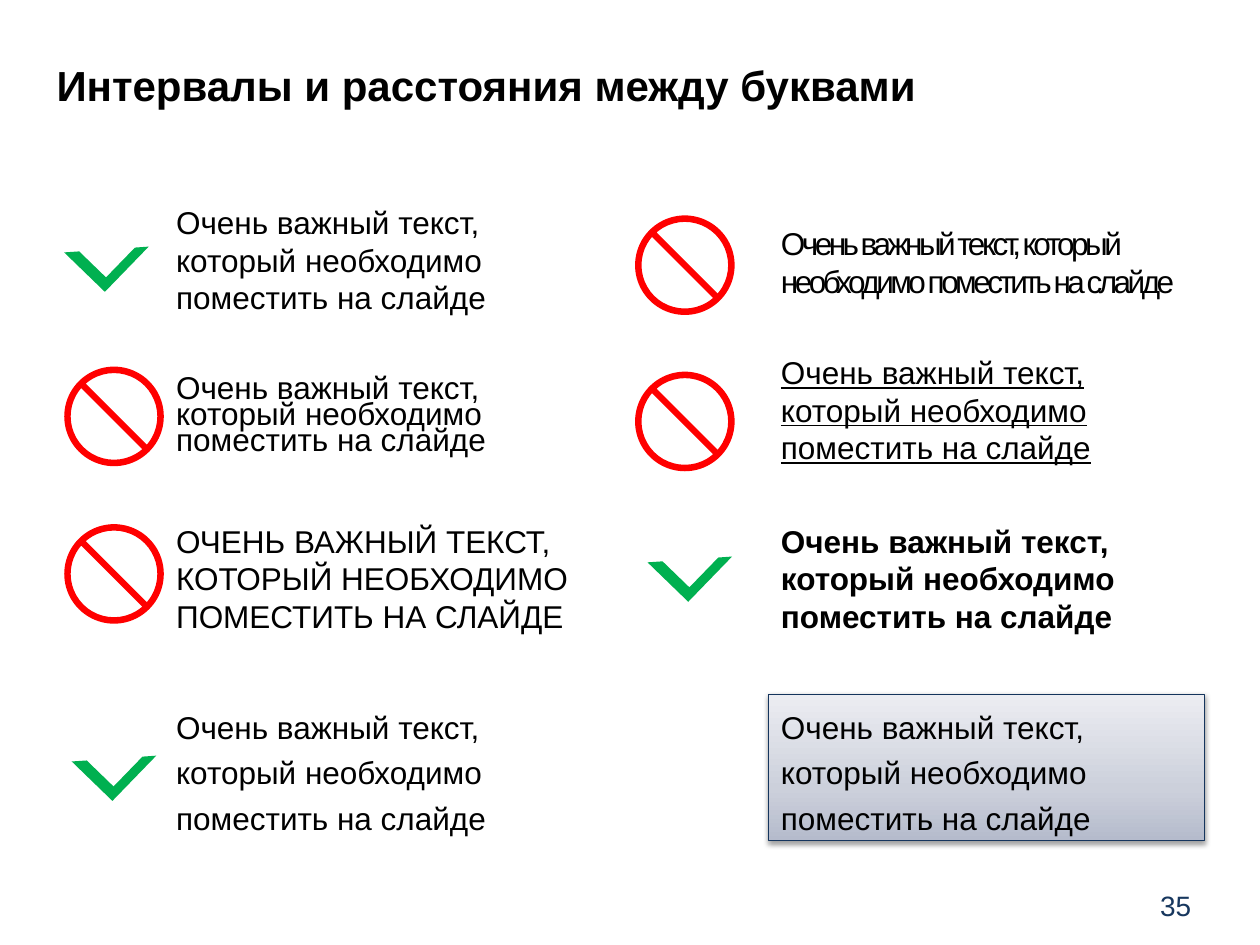
from lxml.etree import SubElement
from pptx import Presentation
from pptx.dml.color import RGBColor
from pptx.enum.shapes import MSO_SHAPE as Shape
from pptx.enum.text import MSO_ANCHOR as Anchor, MSO_AUTO_SIZE as AutoSize, PP_ALIGN as Align
from pptx.oxml.ns import qn
from pptx.util import Inches, Pt

COLORS = {"text": "000000", "number": "17375E", "bad": "FF0000", "good": "00B050",
          "panel_line": "15355D", "shadow": "000000"}
PANEL_STOPS = [(0, "B5BBCC"), (35, "CCD0DB"), (100, "ECEDF2")]

TITLE = "Интервалы и расстояния между буквами"
PAGE_NUMBER = "35"
PHRASE = "Очень важный текст, который необходимо поместить на слайде"

TEXT_LEFT = (1.3, 6.1)
TEXT_WIDTH = 3.46
SIGN_LEFT = (0.51, 5.04)
SIGN_SIZE = 0.79
TICK_SIZE = (0.45, 0.5)

# column, top, height, text formatting
SAMPLES = [
    (0, 1.56, 1.01, {}),
    (0, 2.95, 0.74, {"line_spacing": 0.7}),
    (0, 4.09, 1.01, {"upper": True}),
    (0, 5.51, 1.16, {"line_spacing": 1.2}),
    (1, 1.73, 0.71, {"tracking": -2}),
    (1, 2.75, 1.01, {"underline": True}),
    (1, 4.09, 1.01, {"bold": True}),
    (1, 5.51, 1.16, {"line_spacing": 1.2, "panel": True}),
]
BAD_SIGNS = [(0, 2.91), (0, 4.16), (1, 1.71), (1, 2.95)]  # column, top
GOOD_TICKS = [(0.62, 1.73), (0.68, 5.77), (5.25, 4.19)]  # left, top


def rgb(name):
    return RGBColor.from_string(COLORS[name])


def write(box, text, size, color="text", bold=None, anchor=Anchor.TOP, align=Align.LEFT, wrap=True):
    frame = box.text_frame
    frame.text = text
    frame.word_wrap = wrap
    frame.vertical_anchor = anchor
    paragraph = frame.paragraphs[0]
    paragraph.alignment = align
    font = paragraph.runs[0].font
    font.name, font.size, font.bold = "Arial", Pt(size), bold
    font.color.rgb = rgb(color)
    return paragraph


def add_text_box(slide, left, top, width, height):
    return slide.shapes.add_textbox(*map(Inches, (left, top, width, height)))


def add_shape(slide, preset, left, top, width, height):
    shape = slide.shapes.add_shape(preset, *map(Inches, (left, top, width, height)))
    shape.shadow.inherit = False
    return shape


def add_mark(slide, preset, frame, color, adjustments, rotation=0):
    mark = add_shape(slide, preset, *frame)
    mark.fill.solid()
    mark.fill.fore_color.rgb = rgb(color)
    mark.line.fill.background()
    mark.rotation = rotation
    for index, value in enumerate(adjustments):
        mark.adjustments[index] = value


def style_panel(panel):
    """Give the panel a three-stop gradient, a thin outline and a soft shadow."""
    panel.line.color.rgb = rgb("panel_line")
    panel.line.width = Pt(0.75)
    panel.fill.gradient()
    panel.fill.gradient_angle = 90
    properties = panel._element.spPr
    stops = properties.find(".//" + qn("a:gsLst"))
    for old_stop in list(stops):
        stops.remove(old_stop)
    for percent, color in PANEL_STOPS:
        stop = SubElement(stops, qn("a:gs"), pos=str(percent * 1000))
        SubElement(stop, qn("a:srgbClr"), val=color)
    shadow = SubElement(properties.find(qn("a:effectLst")), qn("a:outerShdw"),
                        blurRad=str(Pt(3.1)), dist=str(Pt(1.6)), dir="5400000", rotWithShape="0")
    tint = SubElement(shadow, qn("a:srgbClr"), val=COLORS["shadow"])
    SubElement(tint, qn("a:alpha"), val="38000")


def add_sample(slide, column, top, height, look):
    frame = (TEXT_LEFT[column], top, TEXT_WIDTH, height)
    if look.get("panel"):
        box = add_shape(slide, Shape.RECTANGLE, *frame)
        style_panel(box)
    else:
        box = add_text_box(slide, *frame)
    text = PHRASE.upper() if look.get("upper") else PHRASE
    paragraph = write(box, text, 18, bold=look.get("bold"))
    box.text_frame.auto_size = AutoSize.SHAPE_TO_FIT_TEXT
    paragraph.line_spacing = look.get("line_spacing")
    run = paragraph.runs[0]
    run.font.underline = look.get("underline")
    if "tracking" in look:
        run.font._element.set("spc", str(look["tracking"] * 100))


def main():
    deck = Presentation()
    deck.slide_width, deck.slide_height = Inches(10), Inches(7.5)
    slide = deck.slides.add_slide(deck.slide_layouts[6])

    write(add_text_box(slide, 9.09, 7, 0.48, 0.37), PAGE_NUMBER, 16, "number",
          anchor=Anchor.MIDDLE, align=Align.CENTER, wrap=False)
    write(add_text_box(slide, 0.35, 0.13, 8.11, 0.79), TITLE, 24, bold=True, anchor=Anchor.BOTTOM)

    for sample in SAMPLES:
        add_sample(slide, *sample)
    for column, top in BAD_SIGNS:
        add_mark(slide, Shape.NO_SYMBOL, (SIGN_LEFT[column], top, SIGN_SIZE, SIGN_SIZE),
                 "bad", [0.065])
    for left, top in GOOD_TICKS:
        add_mark(slide, Shape.HALF_FRAME, (left, top, *TICK_SIZE), "good", [0.197, 0.163], 224.1)

    deck.save("out.pptx")


if __name__ == "__main__":
    main()
